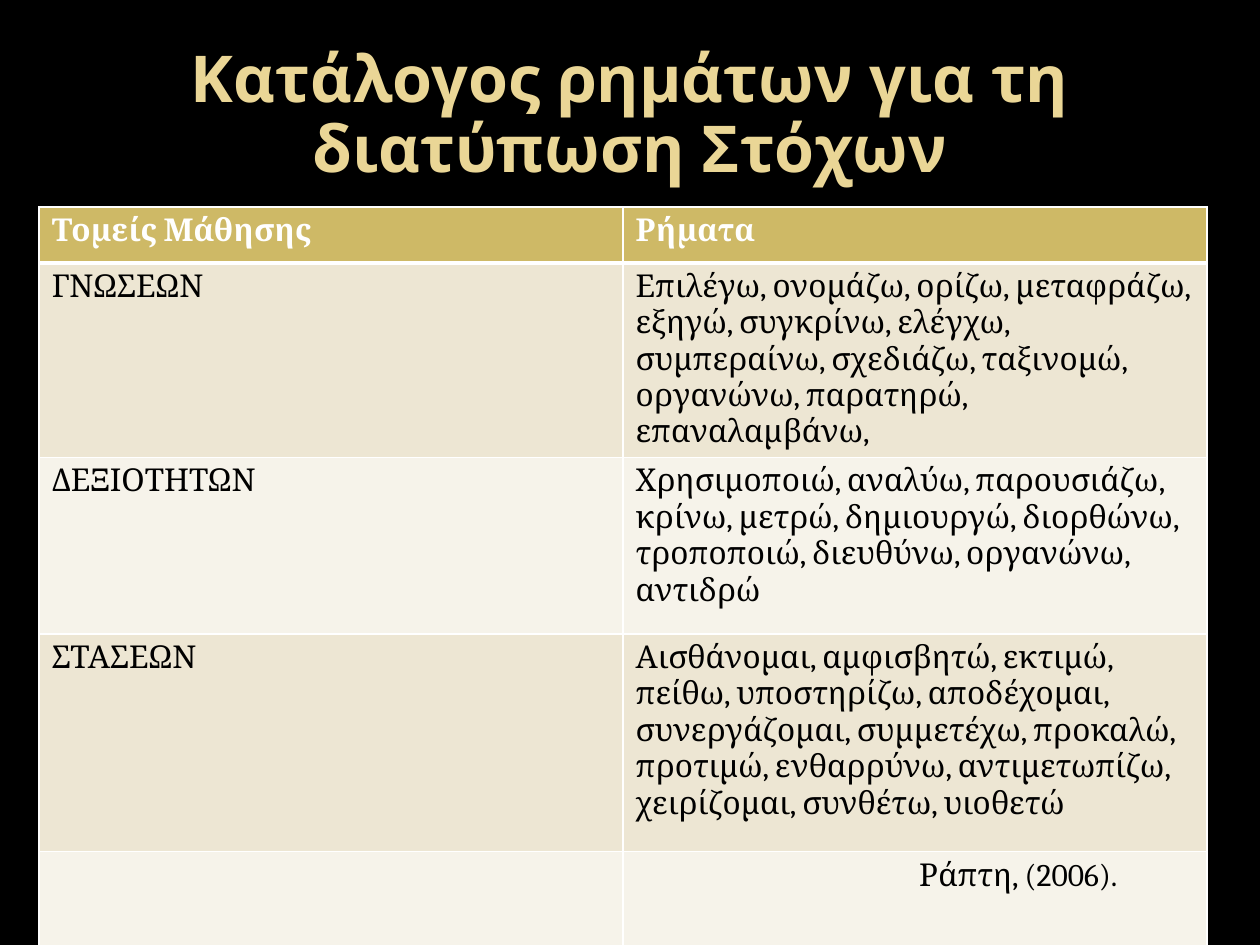
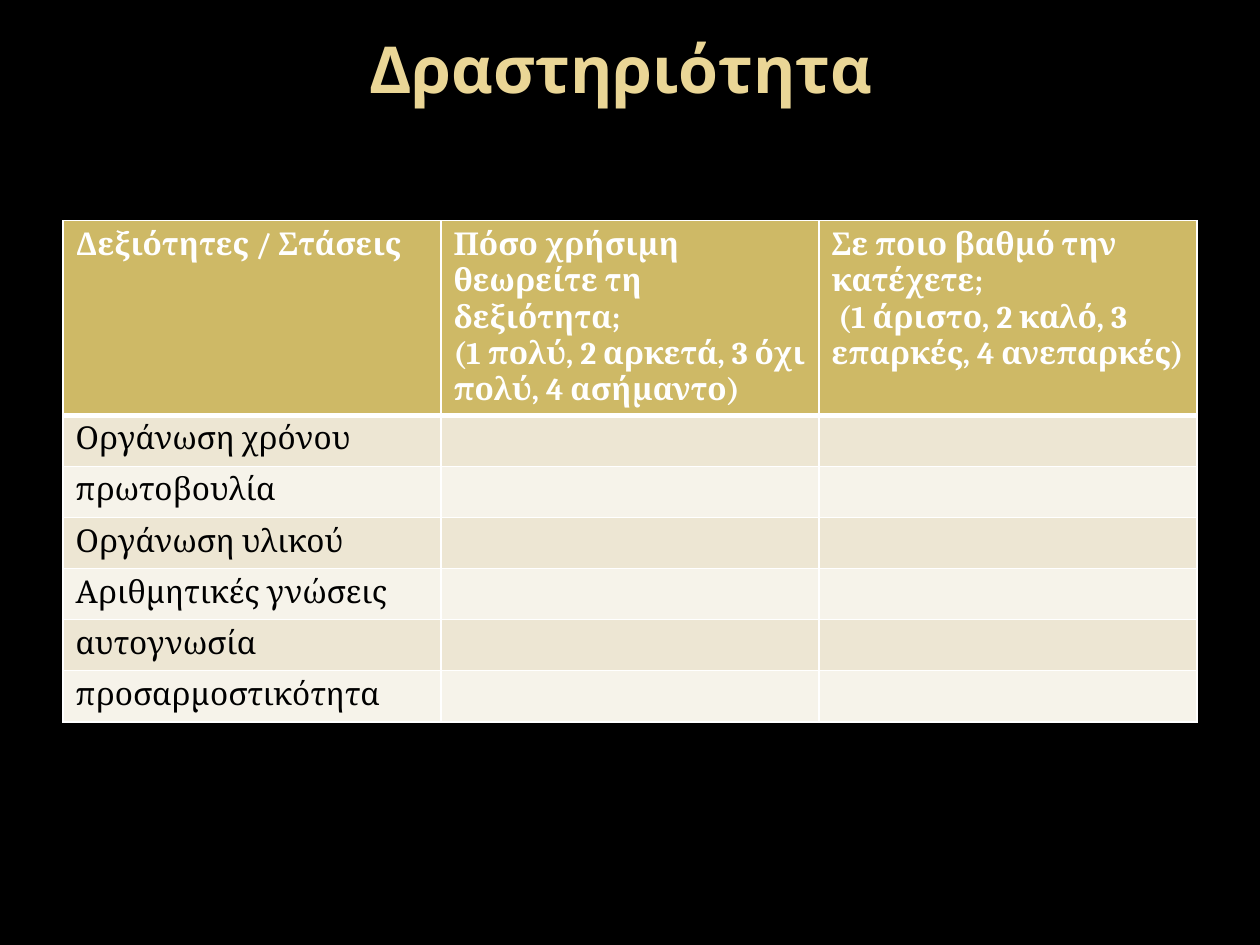
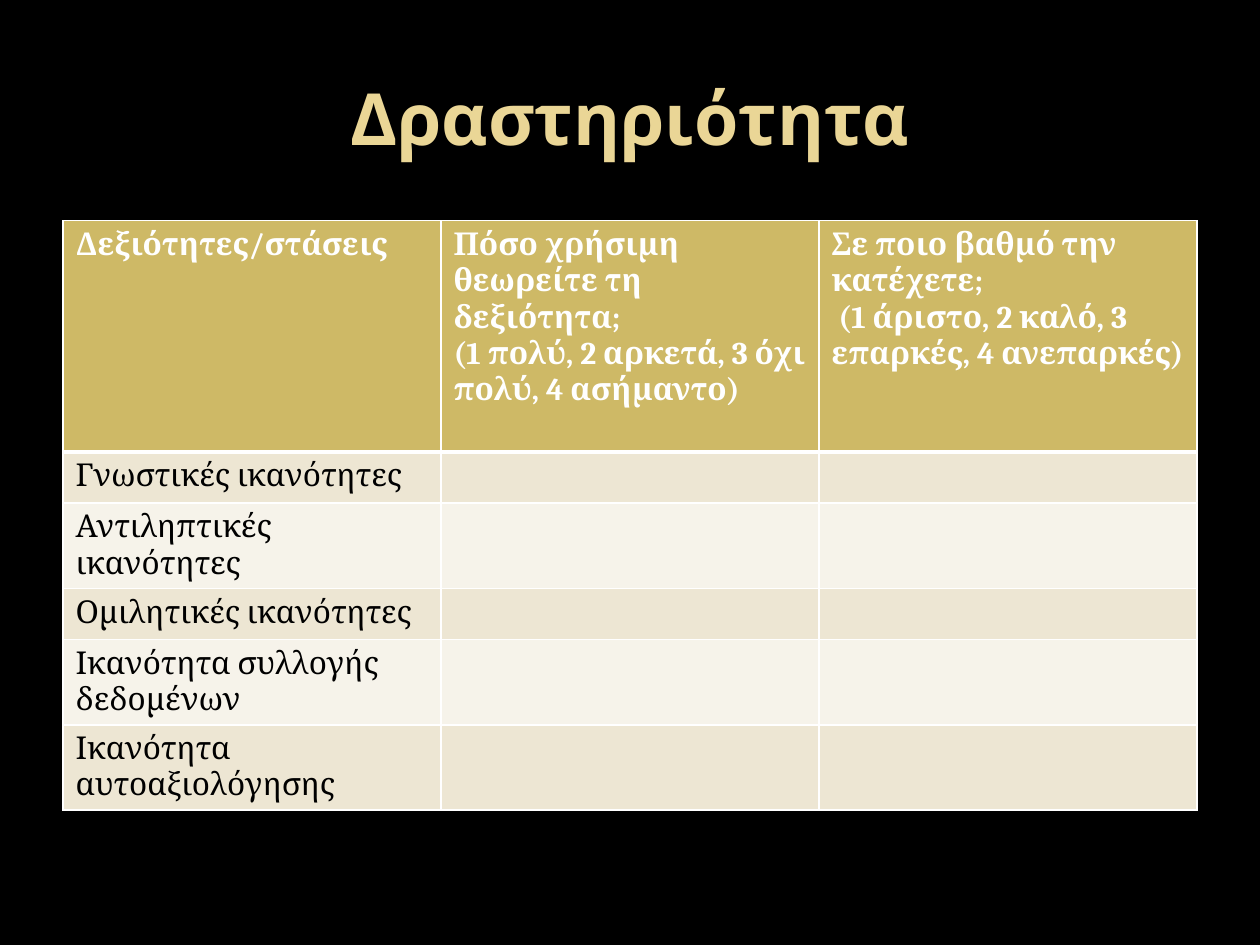
from dataclasses import dataclass

import pptx
import pptx.dml.color
import pptx.enum.text
import pptx.oxml
import pptx.oxml.ns
import pptx.presentation
import pptx.slide
import pptx.table
import pptx.text.text
import pptx.util

Cm = pptx.util.Cm
Pt = pptx.util.Pt
Anchor = pptx.enum.text.MSO_ANCHOR


@dataclass(frozen=True)
class Theme:
    background: str = "000000"
    title: str = "EAD696"
    header_fill: str = "CEB966"
    band_fills: tuple[str, str] = ("EDE6D3", "F6F3EA")
    header_text: str = "FFFFFF"
    body_text: str = "000000"
    border: str = "FFFFFF"
    title_font: str = "Noto Sans"
    table_font: str = "Cambria"
    title_size: float = 41
    compact_title_size: float = 36.9
    table_size: float = 18
    thin_border: float = 1
    header_border: float = 3


@dataclass(frozen=True)
class TitleStyle:
    size: float
    line_spacing: float = 1.0
    anchor: Anchor = Anchor.MIDDLE
    margin_top: float = 0.13
    margin_right: float = 0.25


@dataclass(frozen=True)
class TableSpec:
    left: float
    top: float
    width: float
    row_heights: list[float]
    rows: list[list[str]]


@dataclass(frozen=True)
class PageSpec:
    title: str
    title_style: TitleStyle
    table: TableSpec


THEME = Theme()
QUESTIONS = [
    "Πόσο χρήσιμη θεωρείτε τη δεξιότητα;\n(1 πολύ, 2 αρκετά, 3 όχι πολύ, 4 ασήμαντο)",
    "Σε ποιο βαθμό την κατέχετε;\n (1 άριστο, 2 καλό, 3 επαρκές, 4 ανεπαρκές)",
]
CITATION = "Ράπτη, (2006)."
CITATION_MARGIN = 5.97
ROW_HEIGHT = 1.03


def questionnaire(heading: str, header_height: float, skills: list[str]) -> TableSpec:
    """A table with one skill per row and blank answer columns."""
    return TableSpec(
        1.27, 4.45, 22.86,
        [header_height] + [ROW_HEIGHT] * len(skills),
        [[heading, *QUESTIONS]] + [[skill, "", ""] for skill in skills],
    )


VERBS = TableSpec(
    0.79, 4.17, 23.54,
    [1.13, 3.56, 3.56, 4.39, 4.39],
    [
        ["Τομείς Μάθησης", "Ρήματα"],
        ["ΓΝΩΣΕΩΝ",
         "Επιλέγω, ονομάζω, ορίζω, μεταφράζω, εξηγώ, συγκρίνω, ελέγχω, συμπεραίνω, "
         "σχεδιάζω, ταξινομώ, οργανώνω, παρατηρώ, επαναλαμβάνω,"],
        ["ΔΕΞΙΟΤΗΤΩΝ",
         "Χρησιμοποιώ, αναλύω, παρουσιάζω, κρίνω, μετρώ, δημιουργώ, διορθώνω, "
         "τροποποιώ, διευθύνω, οργανώνω, αντιδρώ"],
        ["ΣΤΑΣΕΩΝ",
         "Αισθάνομαι, αμφισβητώ, εκτιμώ, πείθω, υποστηρίζω, αποδέχομαι, "
         "συνεργάζομαι, συμμετέχω, προκαλώ, προτιμώ, ενθαρρύνω, αντιμετωπίζω, "
         "χειρίζομαι, συνθέτω, υιοθετώ"],
        ["", CITATION],
    ],
)

PAGES = [
    PageSpec(
        "Κατάλογος ρημάτων για τη διατύπωση Στόχων",
        TitleStyle(THEME.compact_title_size, 0.9),
        VERBS,
    ),
    PageSpec(
        "Δραστηριότητα",
        TitleStyle(THEME.compact_title_size, 0.9, Anchor.TOP, 0, 0.61),
        questionnaire("Δεξιότητες / Στάσεις", 3.91, [
            "Οργάνωση χρόνου", "πρωτοβουλία", "Οργάνωση υλικού",
            "Αριθμητικές γνώσεις", "αυτογνωσία", "προσαρμοστικότητα",
        ]),
    ),
    PageSpec(
        "Δραστηριότητα",
        TitleStyle(THEME.title_size),
        questionnaire("Δεξιότητες/στάσεις", 4.66, [
            "Γνωστικές ικανότητες", "Αντιληπτικές ικανότητες",
            "Ομιλητικές ικανότητες", "Ικανότητα συλλογής δεδομένων",
            "Ικανότητα αυτοαξιολόγησης",
        ]),
    ),
]


def rgb(color: str) -> pptx.dml.color.RGBColor:
    return pptx.dml.color.RGBColor.from_string(color)


def format_runs(frame: pptx.text.text.TextFrame, font: str, size: float,
                color: str, bold: bool) -> None:
    for paragraph in frame.paragraphs:
        for span in paragraph.runs:
            span.font.name = font
            span.font.size = Pt(size)
            span.font.bold = bold
            span.font.color.rgb = rgb(color)


def set_title(page: pptx.slide.Slide, text: str, style: TitleStyle) -> None:
    box = page.shapes.title
    box.left, box.top, box.width, box.height = Cm(1.27), Cm(0.76), Cm(22.86), Cm(3.18)
    frame = box.text_frame
    frame.text = text
    frame.word_wrap = True
    frame.auto_size = pptx.enum.text.MSO_AUTO_SIZE.NONE
    frame.vertical_anchor = style.anchor
    frame.margin_top = Cm(style.margin_top)
    frame.margin_right = Cm(style.margin_right)
    paragraph = frame.paragraphs[0]
    paragraph.alignment = pptx.enum.text.PP_ALIGN.CENTER
    paragraph.line_spacing = style.line_spacing
    format_runs(frame, THEME.title_font, style.size, THEME.title, True)


def set_borders(cell: pptx.table._Cell, row: int) -> None:
    """Thin lines all round, with a heavy one between header and body."""
    properties = cell._tc.get_or_add_tcPr()
    heavy_side = {0: "lnB", 1: "lnT"}.get(row)
    for side in ("lnL", "lnR", "lnT", "lnB"):
        width = THEME.header_border if side == heavy_side else THEME.thin_border
        properties.append(pptx.oxml.parse_xml(
            f'<a:{side} {pptx.oxml.ns.nsdecls("a")} w="{Pt(width)}">'
            f'<a:solidFill><a:srgbClr val="{THEME.border}"/></a:solidFill></a:{side}>'
        ))


def fill_cell(cell: pptx.table._Cell, text: str, row: int) -> None:
    is_header = row == 0
    set_borders(cell, row)
    cell.fill.solid()
    cell.fill.fore_color.rgb = rgb(
        THEME.header_fill if is_header else THEME.band_fills[(row - 1) % 2])
    if text:
        cell.text_frame.text = text
        color = THEME.header_text if is_header else THEME.body_text
        format_runs(cell.text_frame, THEME.table_font, THEME.table_size, color, is_header)
    if text == CITATION:
        cell.margin_left = Cm(CITATION_MARGIN)


def draw_table(page: pptx.slide.Slide, spec: TableSpec) -> None:
    column_count = len(spec.rows[0])
    table = page.shapes.add_table(
        len(spec.rows), column_count, Cm(spec.left), Cm(spec.top),
        Cm(spec.width), Cm(sum(spec.row_heights)),
    ).table
    for column in table.columns:
        column.width = Cm(spec.width / column_count)
    for row, (height, texts) in enumerate(zip(spec.row_heights, spec.rows)):
        table.rows[row].height = Cm(height)
        for column, text in enumerate(texts):
            fill_cell(table.cell(row, column), text, row)


def draw_page(deck: pptx.presentation.Presentation, spec: PageSpec) -> None:
    page = deck.slides.add_slide(deck.slide_layouts.get_by_name("Title Only"))
    set_title(page, spec.title, spec.title_style)
    draw_table(page, spec.table)


def main() -> None:
    deck = pptx.Presentation()
    deck.slide_width, deck.slide_height = Cm(25.4), Cm(19.05)
    background = deck.slide_master.background.fill
    background.solid()
    background.fore_color.rgb = rgb(THEME.background)
    for spec in PAGES:
        draw_page(deck, spec)
    deck.save("out.pptx")


if __name__ == "__main__":
    main()
